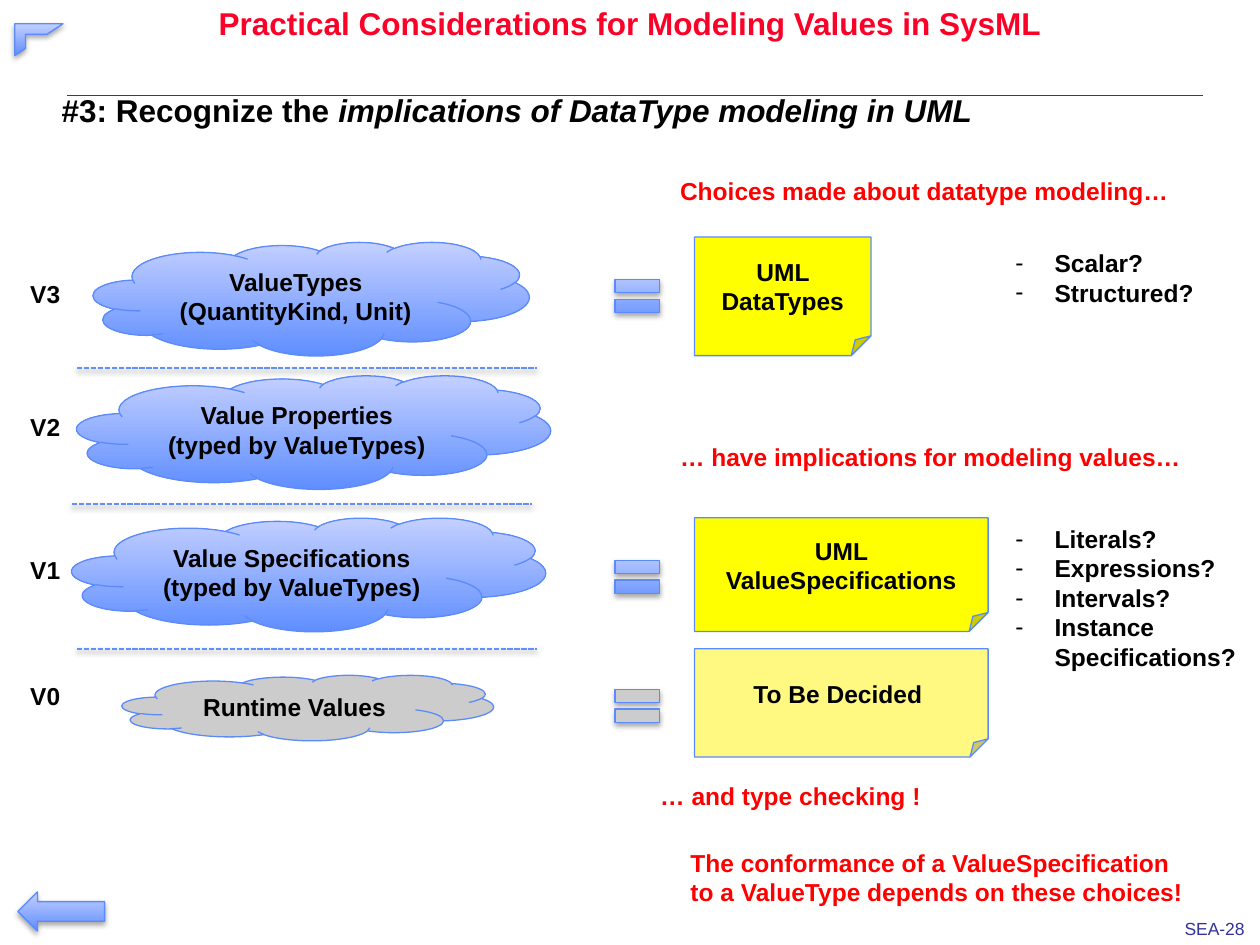
import pptx
import pptx.util
import pptx.dml.color
import pptx.enum.dml
import pptx.enum.shapes
import pptx.enum.text
from dataclasses import dataclass
from lxml import etree
from pptx.oxml.ns import qn

Cm = pptx.util.Cm
Pt = pptx.util.Pt
SHAPE = pptx.enum.shapes.MSO_SHAPE
ALIGN = pptx.enum.text.PP_ALIGN
ANCHOR = pptx.enum.text.MSO_ANCHOR


@dataclass(frozen=True)
class Theme:
    font: str = "Arial"
    heading_size: int = 18
    text_size: int = 14
    number_size: int = 10
    title: str = "FC0128"
    text: str = "000000"
    callout: str = "FF0000"
    navy: str = "333399"
    outline: str = "5B8AFB"
    divider: str = "618FFD"
    blue: tuple = ("5F8EFF", "C4D0FF")
    grey: str = "CCCCCC"
    yellow: str = "FFFF00"
    pale_yellow: str = "FFF981"


THEME = Theme()

TITLE = "Practical Considerations for Modeling Values in SysML"
HEADING = ("#3: Recognize the ", "implications of DataType modeling in UML")
PAGE_NUMBER = "SEA-28"

# All boxes are (left, top, width, height) in centimetres.
# Level name, top of the name, cloud text, cloud box, fill
LEVELS = [
    ("V3", 5.51, "ValueTypes\n(QuantityKind, Unit)", (1.88, 4.88, 8.79, 2.29), THEME.blue),
    ("V2", 8.18, "Value Properties\n(typed by ValueTypes)", (1.55, 7.57, 9.55, 2.29), THEME.blue),
    ("V1", 11.07, "Value Specifications\n(typed by ValueTypes)", (1.45, 10.44, 9.55, 2.29), THEME.blue),
    ("V0", 13.61, "Runtime Values", (2.46, 13.61, 7.49, 1.32), THEME.grey),
]
DIVIDERS = [(1.55, 7.42), (1.45, 10.16), (1.55, 13.08)]
DIVIDER_LENGTH = 9.27

# Note text, top, width, height, fill, top of the equal sign, its fill
NOTES = [
    ("UML DataTypes", 4.78, 3.56, 2.39, THEME.yellow, 5.41, THEME.blue),
    ("UML ValueSpecifications", 10.44, 5.92, 2.29, THEME.yellow, 11.07, THEME.blue),
    ("To Be Decided ", 13.08, 5.92, 2.18, THEME.pale_yellow, 13.67, THEME.grey),
]
NOTE_LEFT = 14.0
EQUAL_LEFT, EQUAL_WIDTH, EQUAL_HEIGHT = 12.24, 1.22, 1.12

QUESTIONS = [
    ("Scalar?\nStructured?", (20.22, 4.88, 4.11, 1.45)),
    ("Literals?\nExpressions?\nIntervals?\nInstance\vSpecifications?", (20.22, 10.44, 5.0, 3.25)),
]
CALLOUTS = [
    ("Choices made about datatype modeling…", (13.46, 3.43, 10.44, 0.86)),
    ("… have implications for modeling values…", (13.46, 8.79, 10.69, 0.86)),
    ("… and type checking !", (13.06, 15.62, 6.2, 0.86)),
    ("The conformance of a ValueSpecification\nto a ValueType depends on these choices!",
     (13.67, 16.97, 11.58, 1.45)),
]
NAVIGATION = [
    (SHAPE.LEFT_ARROW, (0.36, 17.98, 1.75, 0.79)),
    (SHAPE.HALF_FRAME, (0.3, 0.48, 0.97, 0.64)),
]


def rgb(color):
    return pptx.dml.color.RGBColor.from_string(color)


def lengths(box):
    return [Cm(value) for value in box]


def format_text(text_frame, size, color, bold=True, align=ALIGN.LEFT):
    for paragraph in text_frame.paragraphs:
        paragraph.alignment = align
        for run in paragraph.runs:
            run.font.name = THEME.font
            run.font.size = Pt(size)
            run.font.bold = bold
            run.font.color.rgb = rgb(color)


def set_effects(shape, distance=None, opacity=35):
    """Replace the inherited shadow with a soft one below, or with none."""
    effects = etree.SubElement(shape.element.spPr, qn("a:effectLst"))
    if distance:
        shadow = etree.SubElement(effects, qn("a:outerShdw"), blurRad=str(Pt(3.1)),
                                  dist=str(Pt(distance)), dir="5400000", rotWithShape="0")
        color = etree.SubElement(shadow, qn("a:srgbClr"), val=THEME.text)
        etree.SubElement(color, qn("a:alpha"), val=str(opacity * 1000))


def add_shape(slide, kind, box, fill, text="", shadow=None):
    shape = slide.shapes.add_shape(kind, *lengths(box))
    if isinstance(fill, tuple):
        shape.fill.gradient()
        shape.fill.gradient_angle = 90
        for stop, color in zip(shape.fill.gradient_stops, fill):
            stop.color.rgb = rgb(color)
    else:
        shape.fill.solid()
        shape.fill.fore_color.rgb = rgb(fill)
    shape.line.color.rgb = rgb(THEME.outline)
    shape.line.width = Pt(0.75)
    set_effects(shape, shadow)
    if text:
        shape.text_frame.text = text
        shape.text_frame.vertical_anchor = ANCHOR.MIDDLE
        format_text(shape.text_frame, THEME.text_size, THEME.text, align=ALIGN.CENTER)


def add_text(slide, text, box, color=THEME.text, size=THEME.text_size, bold=True, bullet=None):
    text_frame = slide.shapes.add_textbox(*lengths(box)).text_frame
    text_frame.word_wrap = False
    text_frame.text = text
    if bullet:
        for paragraph in text_frame.paragraphs:
            properties = paragraph._p.get_or_add_pPr()
            properties.set("marL", str(Cm(0.79)))
            properties.set("indent", str(-Cm(0.79)))
            etree.SubElement(properties, qn("a:buFont"), typeface=THEME.font)
            etree.SubElement(properties, qn("a:buChar"), char=bullet)
    format_text(text_frame, size, color, bold)
    return text_frame


def add_rule(slide, left, top, length, color, width):
    rule = slide.shapes.add_connector(pptx.enum.shapes.MSO_CONNECTOR.STRAIGHT,
                                      *lengths((left, top, left + length, top)))
    rule.line.color.rgb = rgb(color)
    rule.line.width = Pt(width)
    return rule


def fill_placeholder(placeholder, box, parts, color, align, line_spacing):
    placeholder.left, placeholder.top, placeholder.width, placeholder.height = lengths(box)
    text_frame = placeholder.text_frame
    text_frame.auto_size = pptx.enum.text.MSO_AUTO_SIZE.NONE
    text_frame.vertical_anchor = ANCHOR.TOP
    paragraph = text_frame.paragraphs[0]
    properties = paragraph._p.get_or_add_pPr()
    properties.set("marL", "0")
    properties.set("indent", "0")
    etree.SubElement(properties, qn("a:buNone"))
    paragraph.line_spacing = line_spacing
    paragraph.space_before = Pt(0)
    for part in parts:
        paragraph.add_run().text = part
    format_text(text_frame, THEME.heading_size, color, align=align)
    return paragraph


def main():
    presentation = pptx.Presentation()
    presentation.slide_width, presentation.slide_height = Cm(25.4), Cm(19.05)
    slide = presentation.slides.add_slide(presentation.slide_layouts[1])

    fill_placeholder(slide.shapes.title, (0, 0.03, 25.4, 1.83), [TITLE],
                     THEME.title, ALIGN.CENTER, 0.9)
    heading = fill_placeholder(slide.placeholders[1], (0.99, 1.85, 24.41, 1.68), HEADING,
                               THEME.text, ALIGN.LEFT, 0.8)
    heading.runs[1].font.italic = True
    set_effects(add_rule(slide, 1.35, 1.91, 22.91, THEME.navy, 0.13))
    number = add_text(slide, PAGE_NUMBER, (23.65, 18.39, 1.73, 0.66), THEME.navy,
                      THEME.number_size, bold=False)
    number.margin_left = number.margin_right = Cm(0.23)
    number.margin_top = number.margin_bottom = Cm(0.11)

    for name, name_top, text, box, fill in LEVELS:
        add_shape(slide, SHAPE.CLOUD, box, fill, text)
        add_text(slide, name, (0.36, name_top, 1.12, 0.86))
    for left, top in DIVIDERS:
        divider = add_rule(slide, left, top, DIVIDER_LENGTH, THEME.divider, 1)
        divider.line.dash_style = pptx.enum.dml.MSO_LINE.SQUARE_DOT
        set_effects(divider, 1.6, opacity=38)
    for text, top, width, height, fill, equal_top, equal_fill in NOTES:
        add_shape(slide, SHAPE.MATH_EQUAL, (EQUAL_LEFT, equal_top, EQUAL_WIDTH, EQUAL_HEIGHT),
                  equal_fill, shadow=1.8)
        add_shape(slide, SHAPE.FOLDED_CORNER, (NOTE_LEFT, top, width, height), fill, text)
    for text, box in QUESTIONS:
        add_text(slide, text, box, bullet="-")
    for text, box in CALLOUTS:
        add_text(slide, text, box, THEME.callout)
    for kind, box in NAVIGATION:
        add_shape(slide, kind, box, THEME.blue, shadow=1.8)

    presentation.save("out.pptx")


if __name__ == "__main__":
    main()
